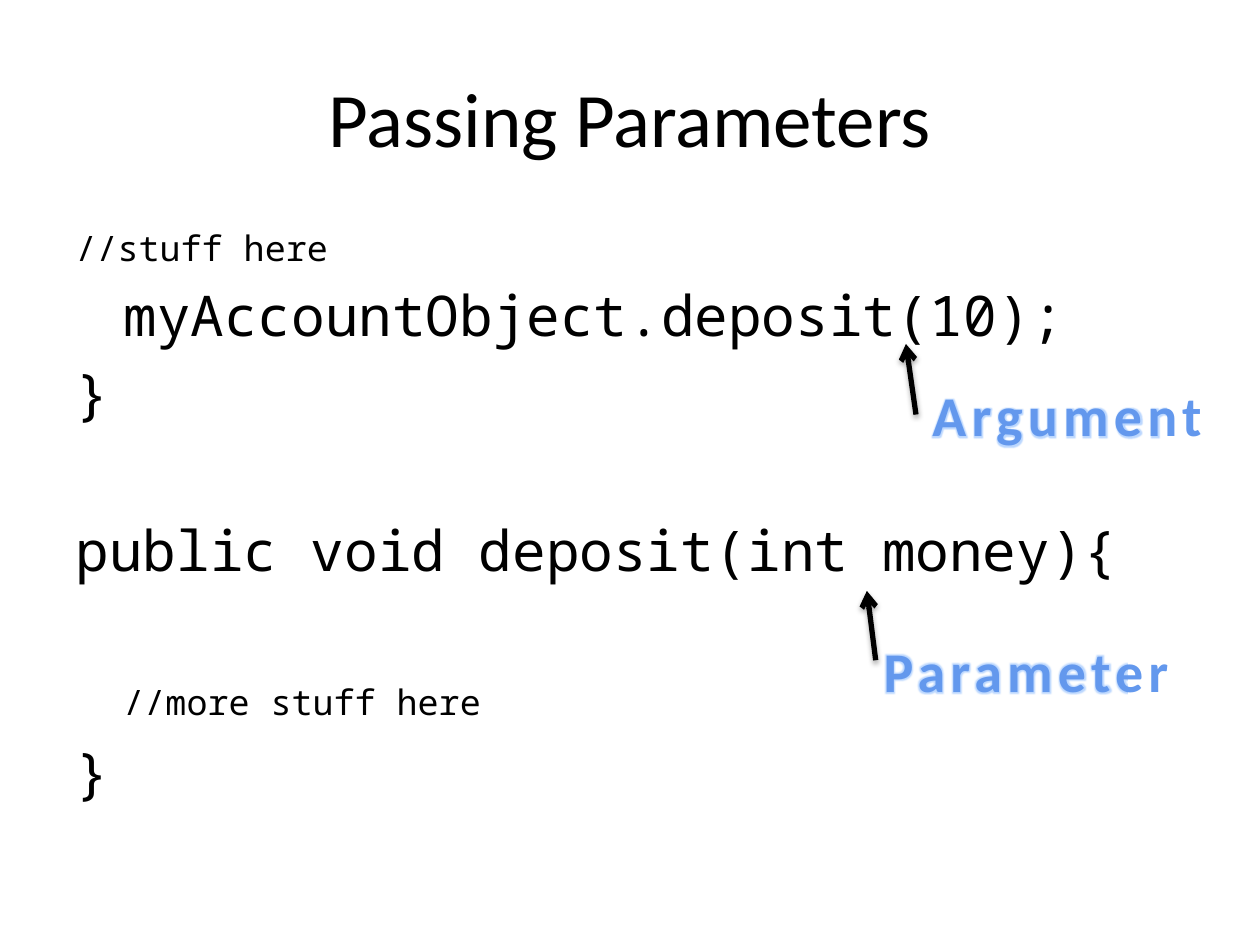
from dataclasses import dataclass

from lxml.etree import fromstring
from pptx import Presentation
from pptx.dml.color import RGBColor as RGB
from pptx.enum.shapes import MSO_CONNECTOR as CONN
from pptx.enum.text import MSO_ANCHOR as ANCHOR, MSO_AUTO_SIZE as FIT, PP_ALIGN as ALIGN
from pptx.oxml.ns import nsdecls, qn
from pptx.util import Inches, Pt


@dataclass(frozen=True)
class Theme:
    ink: RGB = RGB(0x00, 0x00, 0x00)
    label_top: RGB = RGB(0x63, 0x98, 0xED)
    label_bottom: RGB = RGB(0x26, 0x5E, 0xA0)
    label_edge: str = "F4F6F9"
    label_glow: str = "3D8DFF"
    text_font: str = "Calibri"
    code_font: str = "Noto Sans Mono"
    title: Pt = Pt(44)
    code: Pt = Pt(32)
    comment: Pt = Pt(20)
    label: Pt = Pt(32)
    arrow: Pt = Pt(3)


T = Theme()
GAP = 6.4
INDENT = 0.38

# text, size, left indent in inches, space before in points
CODE = [
    ("//stuff here", T.comment, 0, 0),
    ("myAccountObject.deposit(10);", T.code, INDENT, GAP),
    ("}", T.code, 0, GAP),
    ("public void deposit(int money){", T.code, 0, 45 + GAP),
    ("//more stuff here", T.comment, INDENT, 56),
    ("}", T.code, 0, 8.2),
]

# text, label box, arrow start, arrow end
CALLOUTS = [
    ("Argument", (7.27, 2.97, 2.4, 0.64), (7.27, 3.29), (7.19, 2.73)),
    ("Parameter", (6.88, 5, 2.53, 0.64), (6.95, 5.24), (6.88, 4.69)),
]


def xml(tag, attrs="", inner=""):
    return fromstring(f"<a:{tag} {nsdecls('a')} {attrs}>{inner}</a:{tag}>")


def set_attrs(obj, values):
    for name, value in values.items():
        setattr(obj, name, value)


def place(sp, box):
    names = ("left", "top", "width", "height")
    set_attrs(sp, dict(zip(names, map(Inches, box))))


def add_run(p, text, size, font, bold=False):
    r = p.add_run()
    r.text = text
    set_attrs(r.font, {"size": size, "name": font, "bold": bold})
    return r


def build_title(sp, box, text):
    place(sp, box)
    tf = sp.text_frame
    set_attrs(tf, {"vertical_anchor": ANCHOR.MIDDLE, "auto_size": FIT.NONE})
    p = tf.paragraphs[0]
    p.alignment = ALIGN.CENTER
    add_run(p, text, T.title, T.text_font).font.color.rgb = T.ink


def build_code(sp, box):
    place(sp, box)
    tf = sp.text_frame
    tf.auto_size = FIT.NONE
    for i, (text, size, indent, before) in enumerate(CODE):
        p = tf.add_paragraph() if i else tf.paragraphs[0]
        pPr = p._p.get_or_add_pPr()
        pPr.set("marL", str(Inches(indent)))
        pPr.set("indent", "0")
        pPr.append(xml("buNone"))
        p.space_before = Pt(before)
        add_run(p, text, size, T.code_font).font.color.rgb = T.ink


def style_label(r):
    """Gradient letters with a fine edge, a soft glow and wide spacing."""
    fill = r.font.fill
    fill.gradient()
    fill.gradient_angle = 270
    stops = ((0.1, T.label_top), (0.75, T.label_bottom))
    for stop, (position, color) in zip(fill.gradient_stops, stops):
        stop.position = position
        stop.color.rgb = color
    rPr = r._r.get_or_add_rPr()
    rPr.set("spc", "300")
    edge = f'<a:solidFill><a:srgbClr val="{T.label_edge}"/></a:solidFill>'
    rPr.insert(0, xml("ln", f'w="{Pt(0.9)}"', edge))
    glow = (f'<a:glow rad="{Pt(3.6)}"><a:srgbClr val="{T.label_glow}">'
            '<a:alpha val="35000"/></a:srgbClr></a:glow>')
    rPr.find(qn("a:gradFill")).addnext(xml("effectLst", inner=glow))


def add_label(slide, box, text):
    tf = slide.shapes.add_textbox(*map(Inches, box)).text_frame
    set_attrs(tf, {"word_wrap": False, "auto_size": FIT.SHAPE_TO_FIT_TEXT})
    p = tf.paragraphs[0]
    p.alignment = ALIGN.CENTER
    style_label(add_run(p, text, T.label, T.text_font, bold=True))


def add_arrow(slide, start, end):
    cx = slide.shapes.add_connector(CONN.STRAIGHT, *map(Inches, start + end))
    cx.line.width = T.arrow
    cx.line.color.rgb = T.ink
    cx.line._get_or_add_ln().append(xml("tailEnd", 'type="arrow"'))
    shadow = (f'<a:outerShdw blurRad="{Pt(3.1)}" dist="{Pt(1.8)}" dir="5400000" '
              f'rotWithShape="0"><a:srgbClr val="{T.ink}"><a:alpha val="35000"/>'
              '</a:srgbClr></a:outerShdw>')
    cx._element.spPr.append(xml("effectLst", inner=shadow))


def main():
    prs = Presentation()
    set_attrs(prs, {"slide_width": Inches(10), "slide_height": Inches(7.5)})
    slide = prs.slides.add_slide(prs.slide_layouts[1])
    build_title(slide.shapes.title, (0.5, 0.3, 9, 1.25), "Passing Parameters")
    build_code(slide.placeholders[1], (0.5, 1.75, 9, 4.95))
    for text, box, start, end in CALLOUTS:
        add_label(slide, box, text)
        add_arrow(slide, start, end)
    prs.save("out.pptx")


if __name__ == "__main__":
    main()
